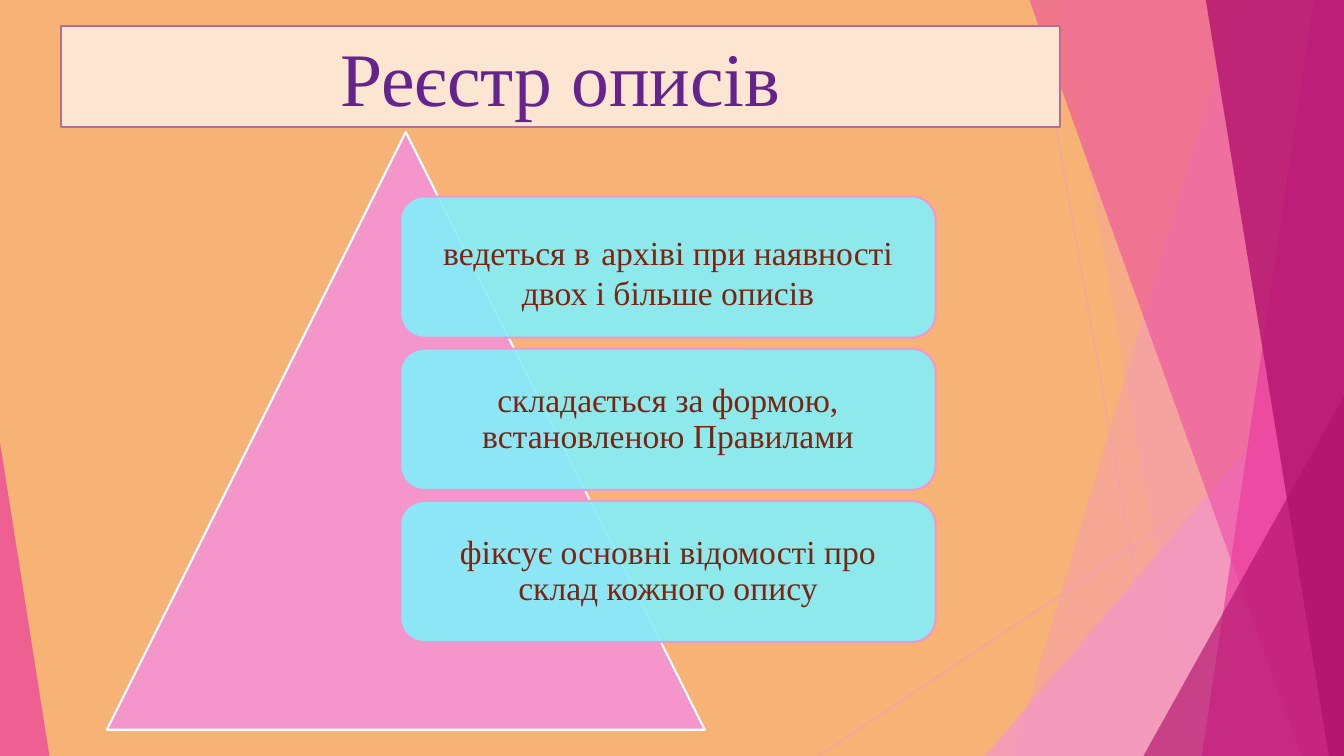
import pptx
import pptx.dml.color
import pptx.enum.shapes
import pptx.enum.text
import pptx.oxml.ns
import pptx.util
from lxml import etree

Inches = pptx.util.Inches
Pt = pptx.util.Pt
SHAPE = pptx.enum.shapes.MSO_SHAPE
WIDTH, HEIGHT = 13.33, 7.5
COLOURS = {
    "background": "F7B275", "pink": "F496CB", "magenta": "EB3D9F",
    "crimson": "B2136D", "card": "82EFFA", "white": "FFFFFF",
    "title fill": "FCE5D1", "title line": "B56F96", "title text": "65238D",
    "card text": "7C240F", "black": "000000",
}
FONT = "Times New Roman"


def rgb(name):
    return pptx.dml.color.RGBColor.from_string(COLOURS[name])


def set_alpha(fill_parent, percent):
    """Make the solid colour below the given element partly transparent."""
    colour = next(fill_parent.iter(pptx.oxml.ns.qn("a:srgbClr")))
    alpha = etree.SubElement(colour, pptx.oxml.ns.qn("a:alpha"))
    alpha.set("val", str(percent * 1000))


def paint(shape, fill, line=None, opacity=100):
    shape.shadow.inherit = False
    shape.fill.solid()
    shape.fill.fore_color.rgb = rgb(fill)
    if opacity < 100:
        set_alpha(shape.fill._xPr, opacity)
    if line:
        shape.line.color.rgb = rgb(line)
        shape.line.width = Pt(1.5)
    else:
        shape.line.fill.background()


def add_preset(page, kind, box, fill, line=None, opacity=100):
    shape = page.shapes.add_shape(kind, *map(Inches, box))
    paint(shape, fill, line, opacity)
    return shape


def add_ray(page, start, end):
    ray = page.shapes.add_connector(
        pptx.enum.shapes.MSO_CONNECTOR.STRAIGHT, *map(Inches, start + end))
    ray.line.color.rgb = rgb("pink")
    ray.line.width = Pt(0.75)
    properties = ray._element.spPr
    set_alpha(properties, 70)
    etree.SubElement(properties, pptx.oxml.ns.qn("a:effectLst"))


def add_band(page, top_x, bottom_x, fill, opacity):
    """Fill from a slanted left edge to the right side of the slide."""
    corners = [(top_x, 0), (WIDTH, 0), (WIDTH, HEIGHT), (bottom_x, HEIGHT)]
    points = [(Inches(x), Inches(y)) for x, y in corners]
    builder = page.shapes.build_freeform(*points[0])
    builder.add_line_segments(points[1:], close=True)
    paint(builder.convert_to_shape(), fill, opacity=opacity)


def add_corner(page, left, top, right, apex, fill, opacity):
    """Stand a right-angled triangle on the bottom edge of the slide."""
    box = (left, top, right - left, HEIGHT - top)
    corner = add_preset(page, SHAPE.ISOSCELES_TRIANGLE, box, fill, opacity=opacity)
    corner.adjustments[0] = apex


def add_backdrop(page):
    page.background.fill.solid()
    page.background.fill.fore_color.rgb = rgb("background")
    add_ray(page, (10.25, 0), (11.58, HEIGHT))
    add_ray(page, (WIDTH, 4.03), (8.12, HEIGHT))
    add_band(page, 12.28, 10.04, "pink", 36)
    add_band(page, 10.5, 11.83, "pink", 20)
    add_corner(page, 9.77, 3.33, WIDTH, 1, "pink", 72)
    add_band(page, 10.21, 12.91, "magenta", 50)
    add_band(page, 13.03, 11.92, "magenta", 70)
    add_band(page, 11.96, 13.18, "crimson", 80)
    add_corner(page, 11.34, 3.93, WIDTH, 1, "crimson", 66)
    add_corner(page, 0, 4.39, 0.49, 0, "magenta", 70)


def write(shape, runs, inset=0.1, spacing=1.0):
    """Centre one paragraph made of (text, size, font, colour) runs."""
    frame = shape.text_frame
    frame.word_wrap = True
    frame.vertical_anchor = pptx.enum.text.MSO_ANCHOR.MIDDLE
    frame.margin_left = frame.margin_right = Inches(inset)
    para = frame.paragraphs[0]
    para.alignment = pptx.enum.text.PP_ALIGN.CENTER
    para.line_spacing = spacing
    for text, size, font, colour in runs:
        span = para.add_run()
        span.text = text
        span.font.size = Pt(size)
        span.font.name = font
        span.font.color.rgb = rgb(colour)


def add_pyramid_list(page, box, cards):
    """Draw a triangle with a column of cards over its right half."""
    left, top, width, height = box
    add_preset(page, SHAPE.ISOSCELES_TRIANGLE, box, "pink", "white")
    for index, runs in enumerate(cards):
        card_box = (left + 2.91, top + 0.64 + index * 1.51, 5.31, 1.4)
        card = add_preset(page, SHAPE.ROUNDED_RECTANGLE, card_box,
                          "card", "pink", opacity=90)
        write(card, runs, inset=0.17, spacing=0.9)


def add_title(page, box, text):
    banner = add_preset(page, SHAPE.RECTANGLE, box, "title fill", "title line")
    write(banner, [(text, 54, FONT, "title text")])


def main():
    deck = pptx.Presentation()
    deck.slide_width, deck.slide_height = Inches(WIDTH), Inches(HEIGHT)
    page = deck.slides.add_slide(deck.slide_layouts[6])
    body = (24, FONT, "card text")
    cards = [
        [("ведеться в", *body), (" ", 36, "Cabin", "black"),
         ("архіві при наявності двох і більше описів", *body)],
        [("складається за формою, встановленою Правилами", *body)],
        [("фіксує основні відомості про склад кожного опису", *body)],
    ]
    add_backdrop(page)
    add_pyramid_list(page, (1.06, 1.31, 5.93, 5.93), cards)
    add_title(page, (0.61, 0.26, 9.9, 1), "Реєстр описів")
    deck.save("out.pptx")


if __name__ == "__main__":
    main()
